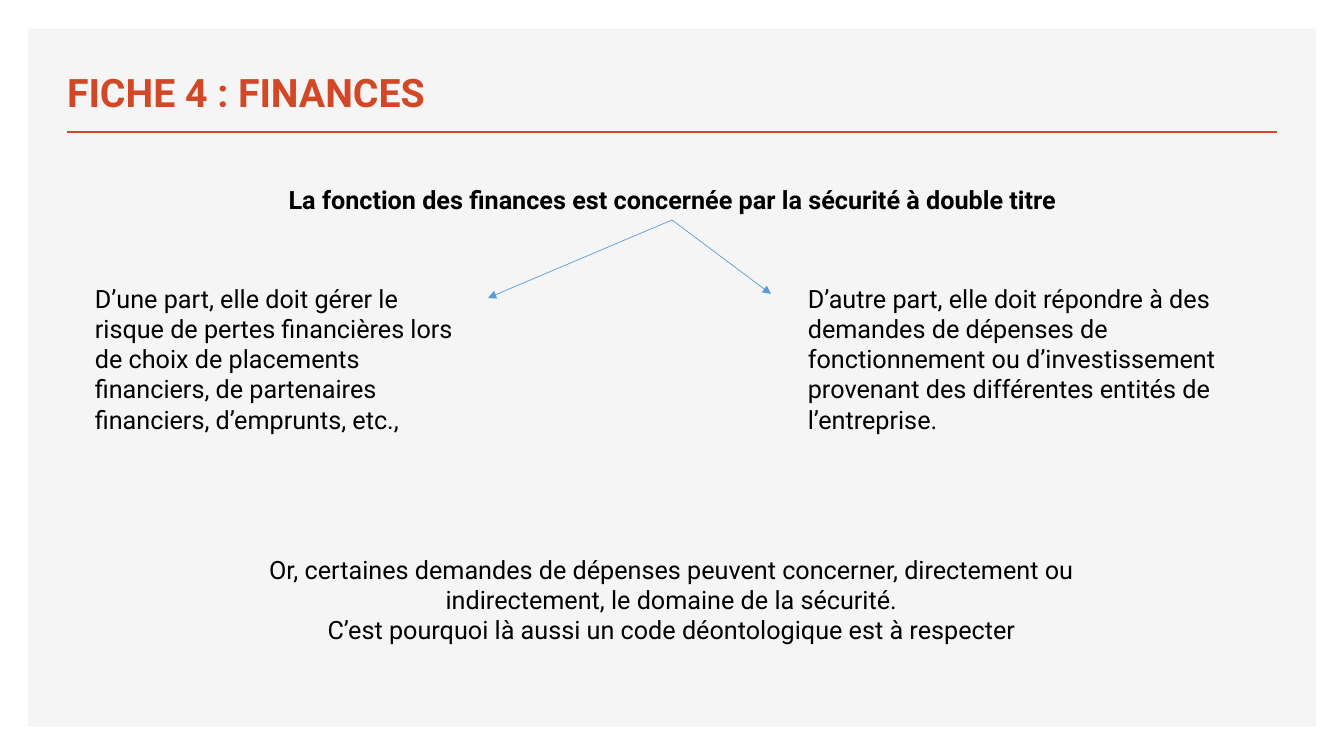
"""Build the finance sheet slide: one statement, two reasons and a conclusion."""
import pptx
import pptx.util
import pptx.dml.color
import pptx.enum.shapes
import pptx.enum.text
import pptx.oxml

RGB = pptx.dml.color.RGBColor
ALIGN = pptx.enum.text.PP_ALIGN
ANCHOR = pptx.enum.text.MSO_ANCHOR

PAPER = RGB(0xF5, 0xF5, 0xF5)
ACCENT = RGB(0xD2, 0x47, 0x26)
BLUE = RGB(0x5B, 0x9B, 0xD5)
BLACK = RGB(0, 0, 0)
FONT = "Roboto"
SCALE = 914400 / 100.8

SIZE = (1344, 756)
PANEL = (28, 29, 1288, 698)
RULE = (67, 132, 1277, 132)
TITLE = ("FICHE 4 : FINANCES", (57, 49, 758, 71))
TEXTS = [
    (["La fonction des finances est concernée par la sécurité à double titre"],
     (216, 179, 913, 40), {"bold": True, "align": ALIGN.CENTER}),
    (["D’une part, elle doit gérer le risque de pertes financières lors de choix "
      "de placements financiers, de partenaires financiers, d’emprunts, etc.,"],
     (85, 278, 387, 163), {}),
    (["D’autre part, elle doit répondre à des demandes de dépenses de "
      "fonctionnement ou d’investissement provenant des différentes entités de "
      "l’entreprise."],
     (798, 278, 461, 163), {}),
    (["Or, certaines demandes de dépenses peuvent concerner, directement ou "
      "indirectement, le domaine de la sécurité.",
      "C’est pourquoi là aussi un code déontologique est à respecter"],
     (187, 549, 969, 102), {"align": ALIGN.CENTER}),
]
FORK = (672, 220)
TIPS = [(488, 298), (771, 294)]


def emu(*px):
    return [pptx.util.Emu(round(n * SCALE)) for n in px]


def write(shape, lines, size=18, color=BLACK, bold=False,
          align=ALIGN.LEFT, anchor=ANCHOR.TOP):
    frame = shape.text_frame
    frame.word_wrap = True
    frame.auto_size = pptx.enum.text.MSO_AUTO_SIZE.NONE
    frame.vertical_anchor = anchor
    frame.text = "\n".join(lines)
    for para in frame.paragraphs:
        para.alignment = align
        font = para.runs[0].font
        font.name, font.size, font.bold = FONT, pptx.util.Pt(size), bold
        font.color.rgb = color


def draw(slide, ends, color, width, arrow=False):
    line = slide.shapes.add_connector(
        pptx.enum.shapes.MSO_CONNECTOR.STRAIGHT, *emu(*ends))
    line.line.color.rgb = color
    line.line.width = pptx.util.Pt(width)
    props = line._element.spPr
    if arrow:
        tail = pptx.oxml.xmlchemy.OxmlElement("a:tailEnd")
        tail.set("type", "triangle")
        props.find(pptx.oxml.ns.qn("a:ln")).append(tail)
    props.append(pptx.oxml.xmlchemy.OxmlElement("a:effectLst"))


def main():
    deck = pptx.Presentation()
    deck.slide_width, deck.slide_height = emu(*SIZE)
    slide = deck.slides.add_slide(deck.slide_layouts[5])

    panel = slide.shapes.add_shape(
        pptx.enum.shapes.MSO_SHAPE.RECTANGLE, *emu(*PANEL))
    panel.shadow.inherit = False
    panel.fill.solid()
    panel.fill.fore_color.rgb = PAPER
    panel.line.fill.background()
    draw(slide, RULE, ACCENT, 2)

    text, box = TITLE
    title = slide.shapes.title
    title.left, title.top, title.width, title.height = emu(*box)
    write(title, [text], size=28, color=ACCENT, bold=True, anchor=ANCHOR.BOTTOM)
    slide.shapes._spTree.append(title._element)

    for lines, box, style in TEXTS:
        write(slide.shapes.add_textbox(*emu(*box)), lines, **style)
    for tip in TIPS:
        draw(slide, FORK + tip, BLUE, 0.5, arrow=True)

    deck.save("out.pptx")


if __name__ == "__main__":
    main()
